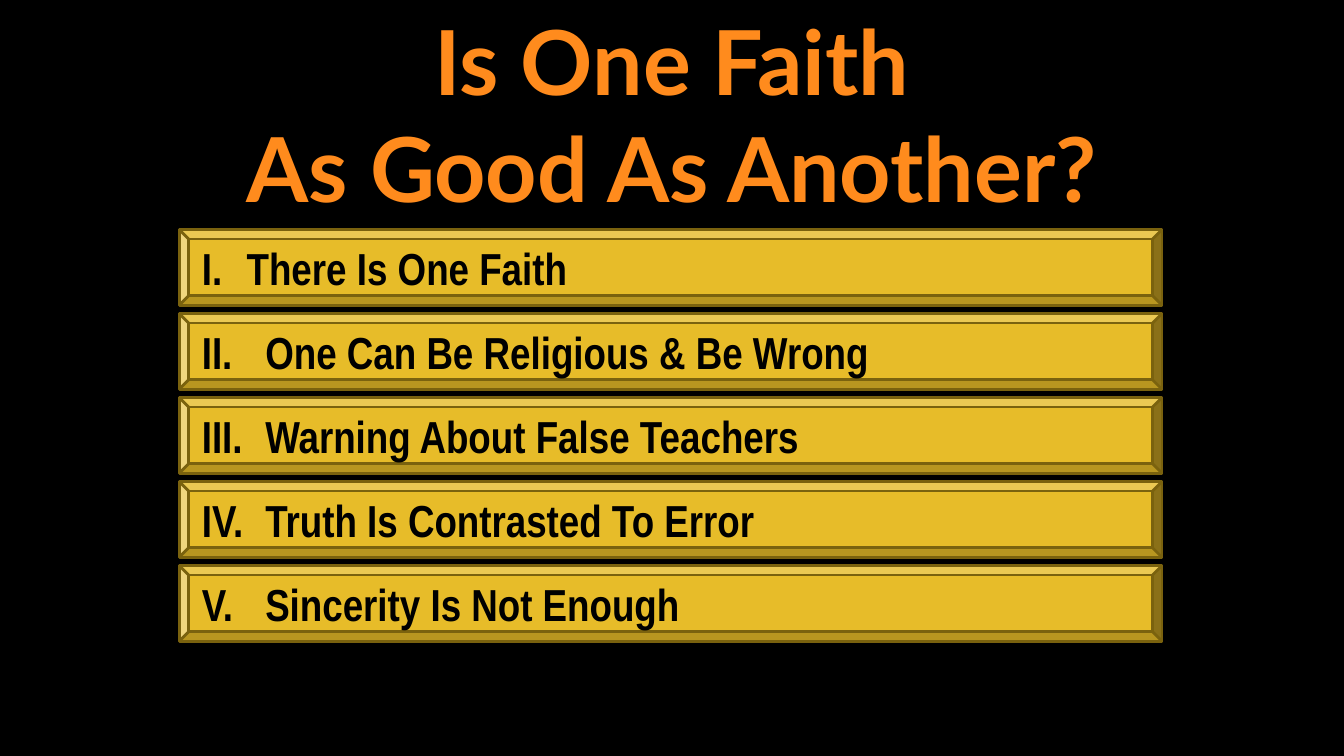
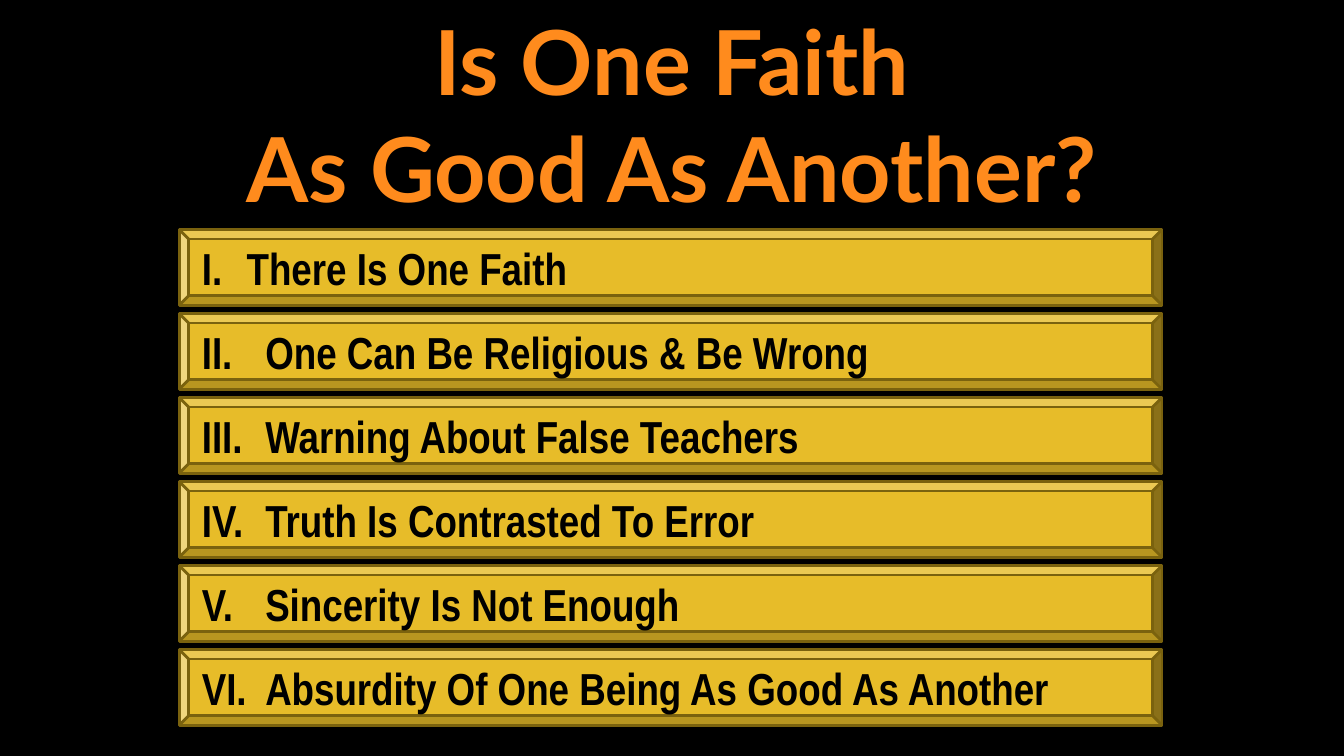
import dataclasses

import lxml.etree
import pptx
import pptx.dml.color
import pptx.enum.shapes
import pptx.enum.text
import pptx.oxml.ns
import pptx.util

Pt = pptx.util.Pt
ALIGN = pptx.enum.text.PP_ALIGN
ANCHOR = pptx.enum.text.MSO_ANCHOR


@dataclasses.dataclass(frozen=True)
class Theme:
    background: str = "000000"
    bar_fill: str = "E7BC29"
    bar_line: str = "7A620E"
    bar_text: str = "000000"
    title_gradient: tuple = ((0, "FFC497"), (75, "FF8B1D"), (100, "E87E00"))
    title_font: str = "Lato"
    title_size: int = 48
    bar_font: str = "Arial Narrow"
    bar_size: int = 24


TITLE_LINES = ["Is One Faith", "As Good As Another?"]
POINTS = [
    "There Is One Faith",
    "One Can Be Religious & Be Wrong",
    "Warning About False Teachers",
    "Truth Is Contrasted To Error",
    "Sincerity Is Not Enough",
    "Absurdity Of One Being As Good As Another",
]
BAR_LEFT, BAR_TOP, BAR_WIDTH, BAR_HEIGHT, BAR_PITCH = 96, 123, 526.5, 40.5, 45


def rgb(color):
    return pptx.dml.color.RGBColor.from_string(color)


def add_xml(parent, tag, **attributes):
    child = lxml.etree.SubElement(parent, pptx.oxml.ns.qn(tag))
    for key, value in attributes.items():
        child.set(key, str(value))
    return child


def apply_gradient(font, stops):
    """Fill the text from top to bottom with (percent, colour) stops."""
    font.fill.gradient()
    font.fill.gradient_angle = 270
    stop_list = font.fill.gradient_stops[0]._gs.getparent()
    for old_stop in list(stop_list):
        stop_list.remove(old_stop)
    for percent, color in stops:
        stop = add_xml(stop_list, "a:gs", pos=percent * 1000)
        add_xml(stop, "a:srgbClr", val=color)


def write(paragraph, text, *, font, size, color=None, gradient=None,
          align=ALIGN.LEFT, numeral=None, indent=0):
    """Add a bold run; numeral gives the paragraph a Roman number."""
    paragraph.alignment = align
    run = paragraph.add_run()
    run.text = text
    run.font.name, run.font.size, run.font.bold = font, Pt(size), True
    if gradient:
        apply_gradient(run.font, gradient)
    else:
        run.font.color.rgb = rgb(color)
    if numeral:
        properties = paragraph._p.get_or_add_pPr()
        properties.set("marL", str(Pt(indent)))
        properties.set("indent", str(-Pt(indent)))
        add_xml(properties, "a:buFont", typeface="+mj-lt")
        add_xml(properties, "a:buAutoNum", type="romanUcPeriod", startAt=numeral)


class Deck:
    def __init__(self, theme):
        self.theme = theme
        self.presentation = pptx.Presentation()
        self.presentation.slide_width = Pt(720)
        self.presentation.slide_height = Pt(405)
        self.slide = None

    def new_slide(self):
        self.slide = self.presentation.slides.add_slide(
            self.presentation.slide_layouts[5])
        background = self.slide.background.fill
        background.solid()
        background.fore_color.rgb = rgb(self.theme.background)

    def title(self, lines):
        heading = self.slide.shapes.title
        heading.left, heading.top = Pt(90), Pt(0)
        heading.width, heading.height = Pt(540), Pt(121.5)
        frame = heading.text_frame
        frame.word_wrap = True
        frame.auto_size = pptx.enum.text.MSO_AUTO_SIZE.SHAPE_TO_FIT_TEXT
        frame.vertical_anchor = ANCHOR.TOP
        frame.margin_left = frame.margin_right = Pt(5)
        frame.margin_top = frame.margin_bottom = Pt(3)
        for index, line in enumerate(lines):
            paragraph = frame.add_paragraph() if index else frame.paragraphs[0]
            write(paragraph, line, font=self.theme.title_font,
                  size=self.theme.title_size, align=ALIGN.CENTER,
                  gradient=self.theme.title_gradient)

    def bar(self, numeral, text):
        top = BAR_TOP + (numeral - 1) * BAR_PITCH
        bar = self.slide.shapes.add_shape(
            pptx.enum.shapes.MSO_SHAPE.BEVEL,
            Pt(BAR_LEFT), Pt(top), Pt(BAR_WIDTH), Pt(BAR_HEIGHT))
        bar.shadow.inherit = False
        bar.fill.solid()
        bar.fill.fore_color.rgb = rgb(self.theme.bar_fill)
        bar.line.color.rgb = rgb(self.theme.bar_line)
        bar.line.width = Pt(1.5)
        bar.text_frame.word_wrap = True
        bar.text_frame.vertical_anchor = ANCHOR.MIDDLE
        write(bar.text_frame.paragraphs[0], text, font=self.theme.bar_font,
              size=self.theme.bar_size, color=self.theme.bar_text,
              numeral=numeral, indent=24 if numeral == 1 else 34)


def main():
    deck = Deck(Theme())
    for shown in (5, 6):
        deck.new_slide()
        deck.title(TITLE_LINES)
        for numeral, point in enumerate(POINTS[:shown], start=1):
            deck.bar(numeral, point)
    deck.presentation.save("out.pptx")


if __name__ == "__main__":
    main()
